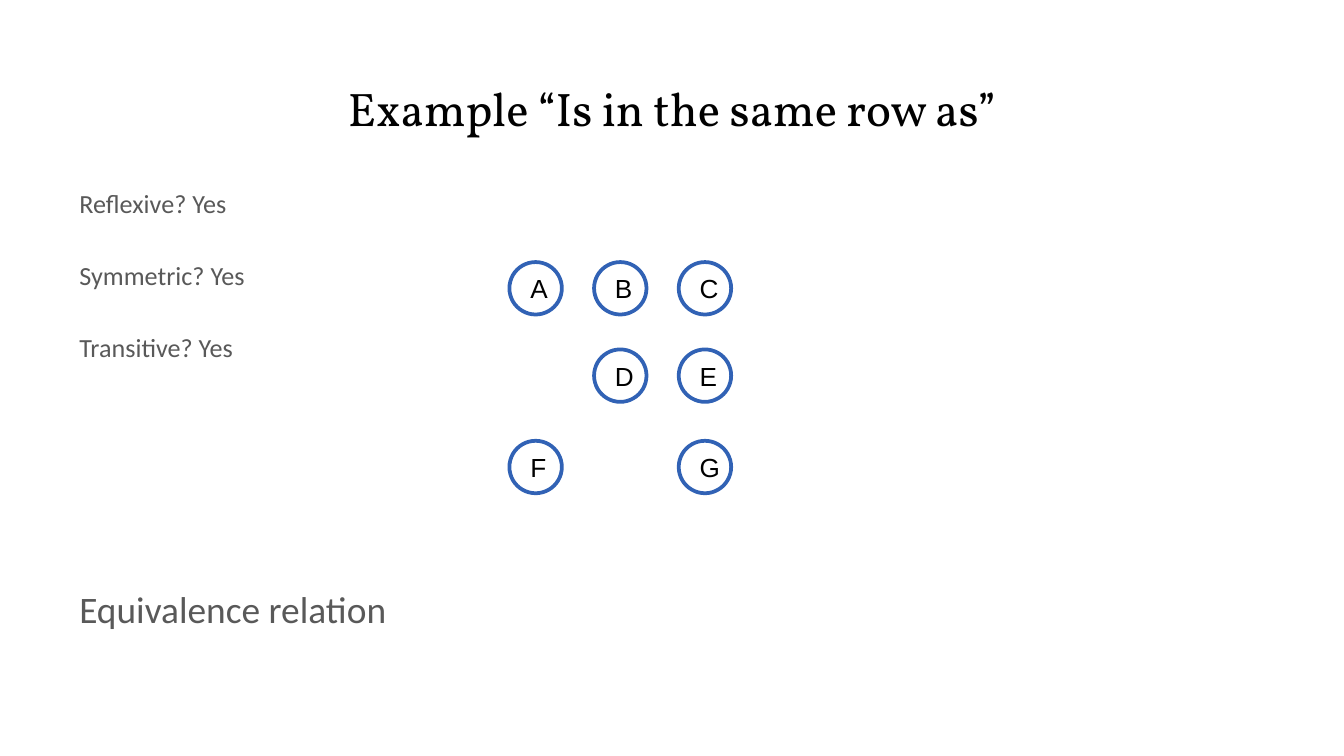
from dataclasses import dataclass

from pptx import Presentation
from pptx.dml.color import RGBColor as Color
from pptx.enum.shapes import MSO_SHAPE as Shape
from pptx.enum.text import MSO_ANCHOR as Anchor, PP_ALIGN as Align
from pptx.util import Inches, Pt


@dataclass(frozen=True)
class Theme:
    black: Color = Color.from_string("000000")
    white: Color = Color.from_string("FFFFFF")
    blue: Color = Color.from_string("3162B5")
    grey: Color = Color.from_string("595959")
    title_font: str = "Vollkorn"
    body_font: str = "Calibri"
    label_font: str = "Arial"
    title_size: float = 25.2
    body_size: float = 14
    result_size: float = 20
    outline: float = 2
    line_gap: float = 19.35


class SlideBuilder:
    def __init__(self, slide, theme):
        self.slide = slide
        self.theme = theme

    def add_span(self, para, text, font, size, color):
        span = para.add_run()
        span.text = text
        span.font.name = font
        span.font.size = Pt(size)
        span.font.color.rgb = color

    def set_margins(self, frame, left=0.1):
        frame.word_wrap = True
        frame.vertical_anchor = Anchor.TOP
        frame.margin_left = Inches(left)
        frame.margin_right = frame.margin_top = frame.margin_bottom = Inches(0.1)

    def add_title(self, text, left, top, width, height):
        title = self.slide.shapes.title
        title.left, title.top = Inches(left), Inches(top)
        title.width, title.height = Inches(width), Inches(height)
        self.set_margins(title.text_frame)
        para = title.text_frame.paragraphs[0]
        para.alignment = Align.CENTER
        self.add_span(para, text, self.theme.title_font,
                      self.theme.title_size, self.theme.black)

    def add_body(self, lines, left, top, width, height):
        """Each line is (text, size, number of line gaps before it)."""
        box = self.slide.shapes.add_textbox(
            Inches(left), Inches(top), Inches(width), Inches(height))
        frame = box.text_frame
        self.set_margins(frame, left=0.25)
        for index, (text, size, gaps) in enumerate(lines):
            para = frame.add_paragraph() if index else frame.paragraphs[0]
            para.line_spacing = 1.15
            para.space_before = Pt(gaps * self.theme.line_gap)
            self.add_span(para, text, self.theme.body_font, size, self.theme.grey)

    def add_node(self, group, label, left, top, size):
        node = group.shapes.add_shape(
            Shape.OVAL, Inches(left), Inches(top), Inches(size), Inches(size))
        node.shadow.inherit = False
        node.fill.solid()
        node.fill.fore_color.rgb = self.theme.white
        node.line.color.rgb = self.theme.blue
        node.line.width = Pt(self.theme.outline)
        node.text_frame.vertical_anchor = Anchor.MIDDLE
        para = node.text_frame.paragraphs[0]
        para.alignment = Align.CENTER
        self.add_span(para, label, self.theme.label_font,
                      self.theme.body_size, self.theme.black)

    def add_node_rows(self, rows, left, step, size):
        """Each row is (top, labels); a space leaves its column empty."""
        group = self.slide.shapes.add_group_shape()
        for top, labels in rows:
            for column, label in enumerate(labels):
                if label != " ":
                    self.add_node(group, label, left + column * step, top, size)


def main():
    # Widescreen page, 16:9
    deck = Presentation()
    deck.slide_width, deck.slide_height = Inches(10), Inches(10 * 9 / 16)
    title_only = deck.slide_layouts[5]
    theme = Theme()
    builder = SlideBuilder(deck.slides.add_slide(title_only), theme)

    # Title
    builder.add_title("Example “Is in the same row as”", 0.34, 0.49, 9.32, 0.63)

    # Elements arranged in rows
    builder.add_node_rows([(1.95, "ABC"), (2.6, " DE"), (3.28, "F G")],
                          left=3.79, step=0.63, size=0.39)

    # Properties and conclusion
    builder.add_body([
        ("Reflexive? Yes", theme.body_size, 0),
        ("Symmetric? Yes", theme.body_size, 1),
        ("Transitive? Yes", theme.body_size, 1),
        ("Equivalence relation", theme.result_size, 6),
    ], 0.34, 1.26, 9.32, 3.74)

    deck.save("out.pptx")


if __name__ == "__main__":
    main()
